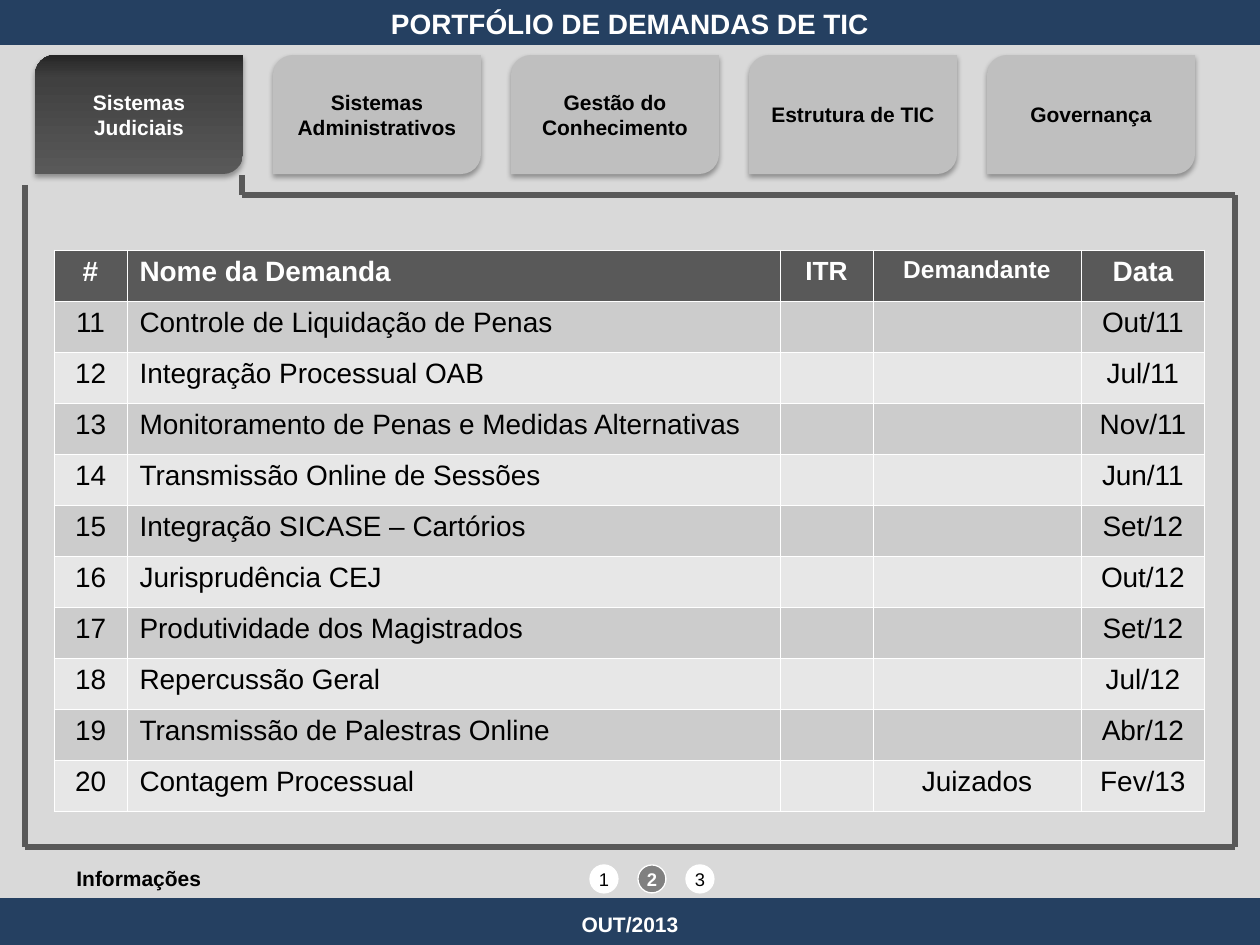
from itertools import pairwise

from lxml import etree
from copy import deepcopy
from pptx import Presentation
from pptx import util as u
from pptx.dml.color import RGBColor
from pptx.enum import shapes, text
from pptx.oxml import parse_xml
from pptx.oxml.ns import nsdecls, qn

HUES = {
    "page": "D9D9D9", "bar": "254061", "dark": "595959", "mid": "404040",
    "deep": "262626", "tab": "BFBFBF", "odd": "CCCCCC", "even": "E7E7E7",
    "dot": "808080", "white": "FFFFFF", "black": "000000",
}
KIND = shapes.MSO_SHAPE
MID, TOP = text.MSO_ANCHOR.MIDDLE, text.MSO_ANCHOR.TOP
LEFT, MIDST = text.PP_ALIGN.LEFT, text.PP_ALIGN.CENTER

TABS = ["Sistemas Judiciais", "Sistemas Administrativos",
        "Gestão do Conhecimento", "Estrutura de TIC", "Governança"]
HEADS = ["#", "Nome da Demanda", "ITR", "Demandante", "Data"]
SIZES = [16, 16, 15, 14, 16]
COLS = [73, 653, 93, 208, 124]
ITEMS = [
    ("Controle de Liquidação de Penas", "", "Out/11"),
    ("Integração Processual OAB", "", "Jul/11"),
    ("Monitoramento de Penas e Medidas Alternativas", "", "Nov/11"),
    ("Transmissão Online de Sessões", "", "Jun/11"),
    ("Integração SICASE – Cartórios", "", "Set/12"),
    ("Jurisprudência CEJ", "", "Out/12"),
    ("Produtividade dos Magistrados", "", "Set/12"),
    ("Repercussão Geral", "", "Jul/12"),
    ("Transmissão de Palestras Online", "", "Abr/12"),
    ("Contagem Processual", "Juizados", "Fev/13"),
]


def px(n):
    return u.Emu(round(n * 914400 / 126))


def rgb(hue):
    return RGBColor.from_string(HUES[hue])


def write(frame, words, size, hue, bold=True, align=MIDST):
    frame.text = words
    para = frame.paragraphs[0]
    para.alignment = align
    for font in [para.font] + [run.font for run in para.runs]:
        font.name, font.size, font.bold = "Arial", u.Pt(size), bold
        font.color.rgb = rgb(hue)


def block(slide, kind, box, hue, edge=None):
    part = slide.shapes.add_shape(kind, *map(px, box))
    part.shadow.inherit = False
    part.fill.solid()
    part.fill.fore_color.rgb = rgb(hue)
    if edge:
        part.line.color.rgb = rgb(edge)
        part.line.width = u.Pt(0.75)
    else:
        part.line.fill.background()
    return part


def label(slide, box, words, size, hue, anchor=TOP, align=MIDST):
    part = slide.shapes.add_textbox(*map(px, box))
    part.text_frame.word_wrap = True
    part.text_frame.vertical_anchor = anchor
    write(part.text_frame, words, size, hue, align=align)


def shade(part):
    """Soft shadow straight below the part."""
    glow = part.element.spPr.find(qn("a:effectLst"))
    glow.append(parse_xml(
        f'<a:outerShdw {nsdecls("a")} blurRad="{u.Pt(3.1)}" dist="{u.Pt(1.8)}" '
        'dir="5400000" algn="t" rotWithShape="0"><a:srgbClr val="000000">'
        '<a:alpha val="35000"/></a:srgbClr></a:outerShdw>'))


def blend(part):
    """Three-stop gradient, darkest at the top."""
    part.fill.gradient()
    part.fill.gradient_angle = 90
    stops = part.element.spPr.find(qn("a:gradFill")).find(qn("a:gsLst"))
    stops.insert(1, deepcopy(stops[0]))
    marks = zip(part.fill.gradient_stops, (0, 0.8, 1), ("dark", "mid", "deep"))
    for stop, pos, hue in marks:
        stop.position = pos
        stop.color.rgb = rgb(hue)


def draw_tabs(slide, x, y, wide, high, step):
    for i, words in enumerate(TABS):
        part = block(slide, KIND.ROUND_2_DIAG_RECTANGLE,
                     (x + i * step, y, wide, high), "tab")
        if i == 0:
            blend(part)
        shade(part)
        part.text_frame.vertical_anchor = MID
        write(part.text_frame, words, 12, "black" if i else "white")


def draw_frame(slide, x, y, wide, high, notch):
    right, low = x + wide, y + high
    dots = [(x, y - 10), (x, low), (right, low), (right, y),
            (x + notch, y), (x + notch, y - 20)]
    for start, end in pairwise(dots):
        line = slide.shapes.add_connector(
            shapes.MSO_CONNECTOR.STRAIGHT, *map(px, start + end))
        line.line.color.rgb = rgb("dark")
        line.line.width = u.Pt(3)
        etree.SubElement(line.element.spPr, qn("a:effectLst"))


def rule(cell):
    """Thin white borders on all four sides."""
    props = cell._tc.get_or_add_tcPr()
    for i, side in enumerate(("lnL", "lnR", "lnT", "lnB")):
        props.insert(i, parse_xml(
            f'<a:{side} {nsdecls("a")} w="{u.Pt(0.5)}"><a:solidFill>'
            f'<a:srgbClr val="{HUES["white"]}"/></a:solidFill></a:{side}>'))


def draw_table(slide, x, y, high):
    rows = [HEADS] + [(str(n), name, "", who, date)
                      for n, (name, who, date) in enumerate(ITEMS, 11)]
    table = slide.shapes.add_table(
        len(rows), len(COLS), px(x), px(y), px(sum(COLS)),
        px(high * len(rows))).table
    for col, wide in zip(table.columns, COLS):
        col.width = px(wide)
    for r, row in enumerate(rows):
        table.rows[r].height = px(high)
        fill = "dark" if r == 0 else "odd" if r % 2 else "even"
        for c, words in enumerate(row):
            cell = table.cell(r, c)
            cell.fill.solid()
            cell.fill.fore_color.rgb = rgb(fill)
            rule(cell)
            write(cell.text_frame, words, 16 if r else SIZES[c],
                  "black" if r else "white", r == 0, LEFT if c == 1 else MIDST)


def draw_pager(slide, x, y, size, step, now):
    for i in range(3):
        on = i + 1 == now
        dot = block(slide, KIND.OVAL, (x + i * step, y, size, size),
                    "dot" if on else "white", "white")
        frame = dot.text_frame
        frame.word_wrap = False
        frame.vertical_anchor = MID
        frame.margin_left = frame.margin_right = px(23)
        frame.margin_top = frame.margin_bottom = px(11)
        write(frame, str(i + 1), 10.5, "white" if on else "black", on)


def main():
    deck = Presentation()
    deck.slide_width, deck.slide_height = px(1260), px(945)
    slide = deck.slides.add_slide(deck.slide_layouts[6])

    # Background and bars
    block(slide, KIND.RECTANGLE, (0, 45, 1260, 863), "page")
    block(slide, KIND.RECTANGLE, (0, 898, 1260, 47), "bar")
    block(slide, KIND.RECTANGLE, (0, -1, 1260, 46), "bar")
    label(slide, (0, 900, 1260, 49), "OUT/2013", 12, "white", MID)
    label(slide, (0, 0, 1260, 47), "PORTFÓLIO DE DEMANDAS DE TIC", 16, "white")

    # Tabs and the frame they open
    draw_tabs(slide, 35, 55, 208, 119, 238)
    draw_frame(slide, 25, 195, 1210, 652, 217)

    # Demands
    draw_table(slide, 54, 250, 51)

    # Footer
    label(slide, (64, 859, 159, 38), "Informações", 12, "black", align=LEFT)
    draw_pager(slide, 590, 865, 28, 48, 2)
    deck.save("out.pptx")


if __name__ == "__main__":
    main()
